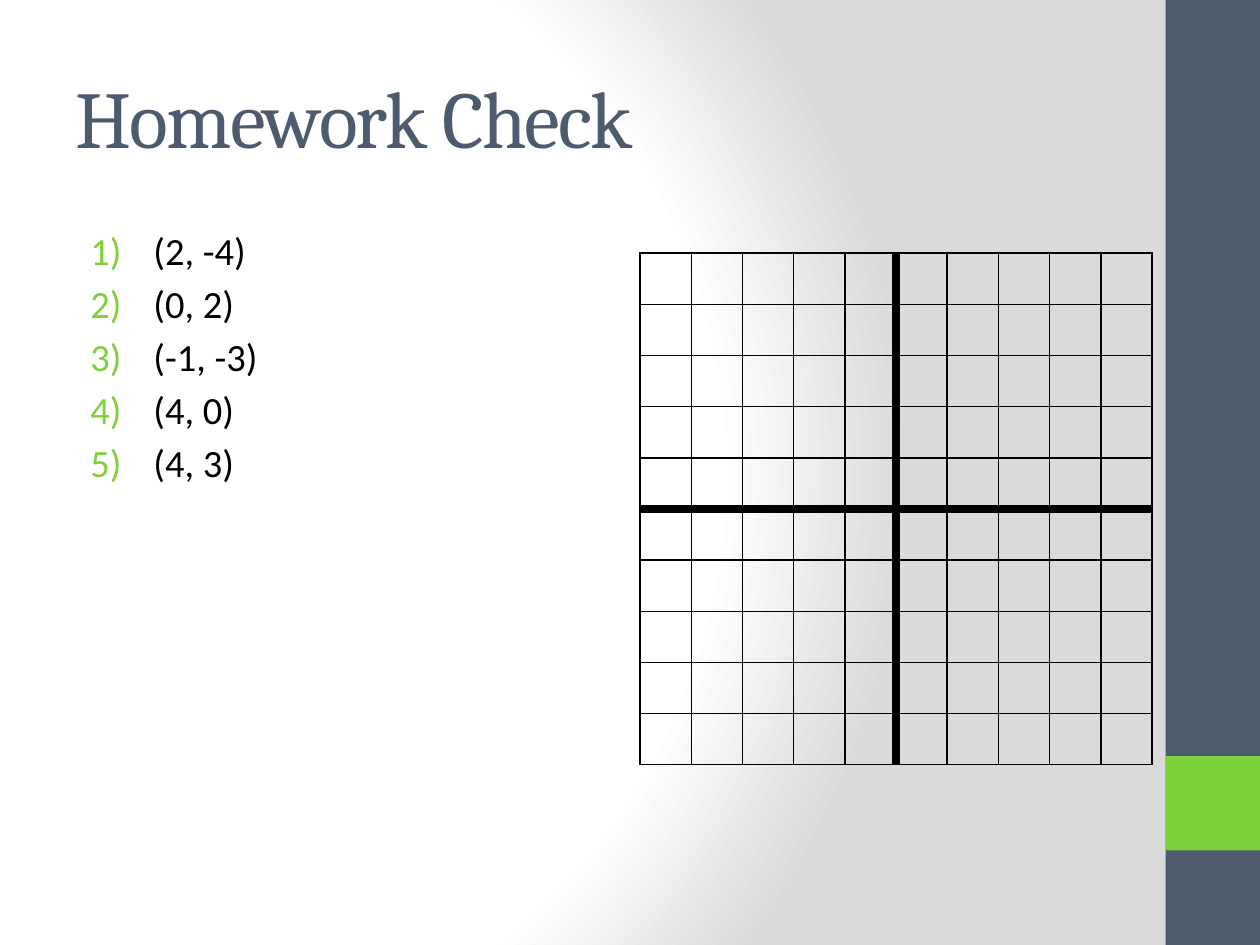
from dataclasses import dataclass

from lxml import etree
from pptx import Presentation
from pptx import util as u
from pptx.dml.color import RGBColor
from pptx.enum import shapes, text
from pptx.oxml import parse_xml
from pptx.oxml.ns import nsdecls, qn

WIDE, HIGH = u.Inches(10), u.Inches(7.5)
SLATE, GREEN, BLACK = "4E5B6F", "7FD13B", "000000"
CELLS = 10
POINTS = ["(2, -4)", "(0, 2)", "(-1, -3)", "(4, 0)", "(4, 3)"]


@dataclass
class Box:
    """A frame given as shares of the slide's width and height."""
    left: float
    top: float
    width: float
    height: float

    def lengths(self) -> tuple:
        return (u.Emu(round(WIDE * self.left)), u.Emu(round(HIGH * self.top)),
                u.Emu(round(WIDE * self.width)), u.Emu(round(HIGH * self.height)))


@dataclass
class Block:
    box: Box
    color: str


BLOCKS = [Block(Box(0.925, 0, 0.075, 1), SLATE),
          Block(Box(0.925, 0.8, 0.075, 0.1), GREEN)]
TITLE = Box(0.05, 0.04, 0.833, 0.1667)
LIST = Box(0.05, 0.2333, 0.217, 0.7)
GRID = Box(0.508, 0.268, 0.4063, 0.5417)


def paint(color: str) -> RGBColor:
    return RGBColor.from_string(color)


def add(parent, tag: str, **attrs: str):
    return etree.SubElement(parent, qn(tag), attrs)


def draw_back(slide) -> None:
    fill = slide.background.fill
    fill.gradient()
    grad = slide.background._cSld.find(".//" + qn("a:gradFill"))
    for child in list(grad):
        grad.remove(child)
    stops = add(grad, "a:gsLst")
    for pos, color in ((0, "FFFFFF"), (75, "FFFFFF"), (100, "DADADA")):
        add(add(stops, "a:gs", pos=str(pos * 1000)), "a:srgbClr", val=color)
    path = add(grad, "a:path", path="circle")
    add(path, "a:fillToRect", l="20000", t="50000", r="100000", b="50000")


def draw_block(slide, block: Block) -> None:
    shape = slide.shapes.add_shape(shapes.MSO_SHAPE.RECTANGLE, *block.box.lengths())
    shape.shadow.inherit = False
    shape.fill.solid()
    shape.fill.fore_color.rgb = paint(block.color)
    shape.line.fill.background()


def add_frame(slide, box: Box):
    frame = slide.shapes.add_textbox(*box.lengths()).text_frame
    frame.word_wrap = True
    return frame


def set_font(para, name: str, size: float, color: str) -> None:
    para.font.name, para.font.size = name, u.Pt(size)
    para.font.color.rgb = paint(color)


def draw_title(slide, words: str) -> None:
    frame = add_frame(slide, TITLE)
    frame.vertical_anchor = text.MSO_ANCHOR.MIDDLE
    para = frame.paragraphs[0]
    run = para.add_run()
    run.text = words
    run._r.get_or_add_rPr().set("spc", "-100")
    set_font(para, "Cambria", 46, SLATE)


def draw_list(slide, items: list[str]) -> None:
    frame = add_frame(slide, LIST)
    for i, item in enumerate(items):
        para = frame.add_paragraph() if i else frame.paragraphs[0]
        para.text = item
        if i:
            para.space_before = u.Pt(4)
        props = para._p.get_or_add_pPr()
        props.set("marL", str(u.Inches(0.62)))
        props.set("indent", str(u.Inches(-0.5)))
        add(add(props, "a:buClr"), "a:srgbClr", val=GREEN)
        add(props, "a:buFont", typeface="+mj-lt")
        add(props, "a:buAutoNum", type="arabicParenR")
        set_font(para, "Calibri", 22, BLACK)


def edge_cell(cell) -> None:
    props = cell._tc.get_or_add_tcPr()
    for i, side in enumerate(("lnL", "lnR", "lnT", "lnB")):
        props.insert(i, parse_xml(
            f'<a:{side} {nsdecls("a")} w="12700"><a:solidFill>'
            f'<a:srgbClr val="{BLACK}"/></a:solidFill></a:{side}>'))


def draw_grid(slide) -> None:
    table = slide.shapes.add_table(CELLS, CELLS, *GRID.lengths()).table
    table.first_row = table.horz_banding = False
    for cell in table.iter_cells():
        cell.margin_top = cell.margin_bottom = 0
        cell.fill.background()
        edge_cell(cell)


def draw_axis(slide, *ends: int) -> None:
    line = slide.shapes.add_connector(shapes.MSO_CONNECTOR.STRAIGHT, *ends)
    line.line.color.rgb = paint(BLACK)
    line.line.width = u.Pt(4.5)
    add(line._element.spPr, "a:effectLst")


def main() -> None:
    deck = Presentation()
    deck.slide_width, deck.slide_height = WIDE, HIGH
    slide = deck.slides.add_slide(deck.slide_layouts[6])

    # Background and side band
    draw_back(slide)
    for block in BLOCKS:
        draw_block(slide, block)

    # Title and answers
    draw_title(slide, "Homework Check")
    draw_list(slide, POINTS)

    # Coordinate plane with its axes through the middle
    draw_grid(slide)
    left, top, width, height = GRID.lengths()
    mid_x, mid_y = left + width // 2, top + height // 2
    draw_axis(slide, left, mid_y, left + width, mid_y)
    draw_axis(slide, mid_x, top, mid_x, top + height)

    deck.save("out.pptx")


if __name__ == "__main__":
    main()
